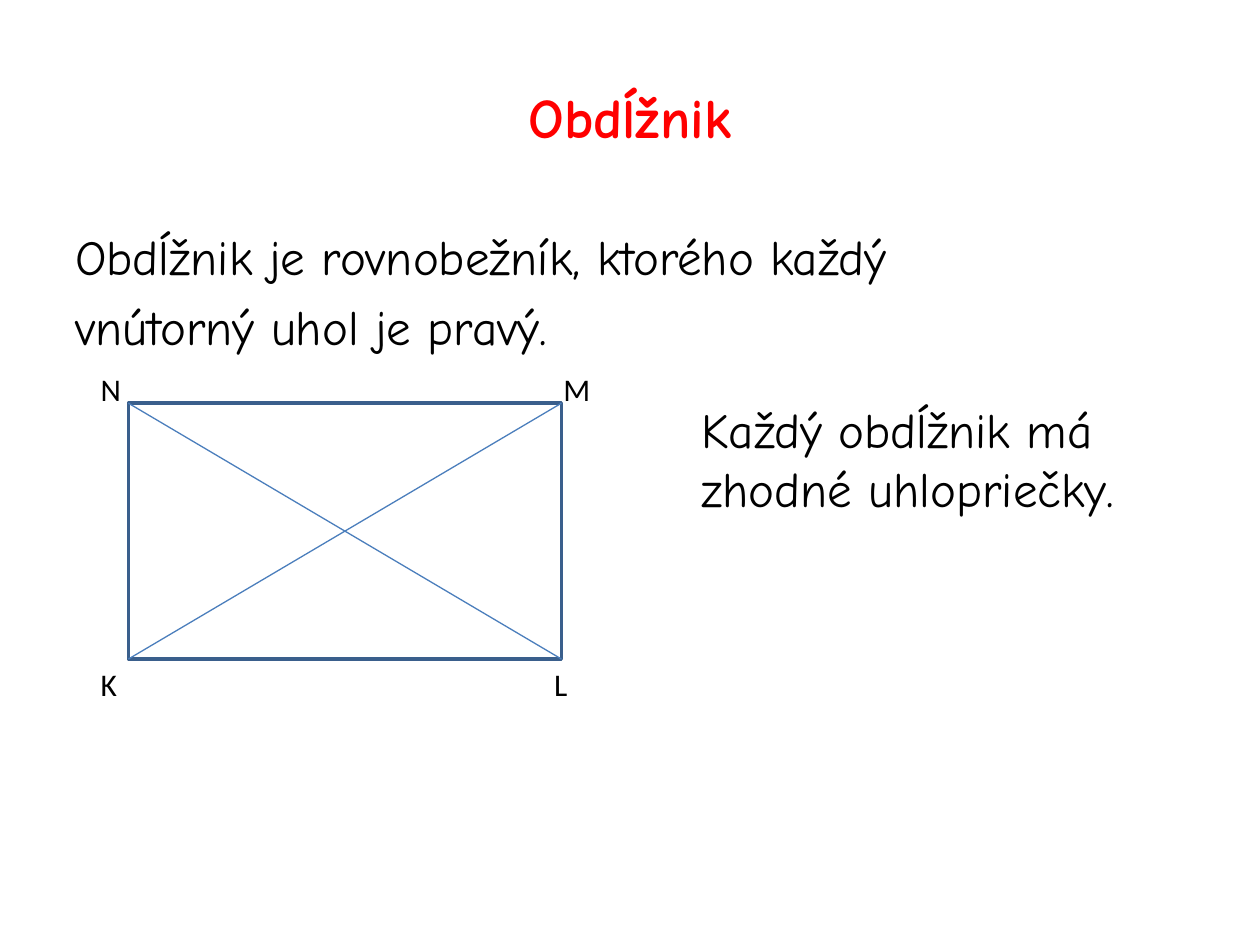
from lxml import etree
from pptx import Presentation
from pptx.dml.color import RGBColor
from pptx.enum.shapes import MSO_CONNECTOR, MSO_SHAPE
from pptx.enum.text import MSO_ANCHOR, MSO_AUTO_SIZE, PP_ALIGN
from pptx.oxml.ns import qn
from pptx.util import Pt

HAND_FONT = "Comic Neue"


def color(hex_code):
    return RGBColor.from_string(hex_code)


def add_text(s, text, x, y, w, h, size=28, font=HAND_FONT, fill="000000",
             bold=False, align=PP_ALIGN.LEFT, anchor=MSO_ANCHOR.TOP,
             wrap=True, grow=False, before=0):
    """Add a text box with one paragraph for each line of text."""
    tf = s.shapes.add_textbox(Pt(x), Pt(y), Pt(w), Pt(h)).text_frame
    tf.word_wrap = wrap
    tf.vertical_anchor = anchor
    tf.auto_size = MSO_AUTO_SIZE.SHAPE_TO_FIT_TEXT if grow else MSO_AUTO_SIZE.NONE
    for i, line in enumerate(text.split("\n")):
        p = tf.paragraphs[0] if i == 0 else tf.add_paragraph()
        p.alignment = align
        p.space_before = Pt(before)
        r = p.add_run()
        r.text = line
        r.font.size = Pt(size)
        r.font.name = font
        r.font.bold = bold
        r.font.color.rgb = color(fill)


def add_rectangle(s, x, y, w, h, line, width):
    sp = s.shapes.add_shape(MSO_SHAPE.RECTANGLE, Pt(x), Pt(y), Pt(w), Pt(h))
    sp.shadow.inherit = False
    sp.fill.background()
    sp.line.color.rgb = color(line)
    sp.line.width = Pt(width)


def add_line(s, x1, y1, x2, y2, line, width):
    cn = s.shapes.add_connector(MSO_CONNECTOR.STRAIGHT, Pt(x1), Pt(y1), Pt(x2), Pt(y2))
    cn.line.color.rgb = color(line)
    cn.line.width = Pt(width)
    etree.SubElement(cn._element.spPr, qn("a:effectLst"))


def main():
    prs = Presentation()
    prs.slide_width, prs.slide_height = Pt(720), Pt(540)
    s = prs.slides.add_slide(prs.slide_layouts[6])

    # Title and definition
    add_text(s, "Obdĺžnik", 36, 21.6, 648, 90, size=32, fill="FF0000", bold=True,
             align=PP_ALIGN.CENTER, anchor=MSO_ANCHOR.MIDDLE)
    add_text(s, "Obdĺžnik je rovnobežník, ktorého každý\nvnútorný uhol je pravý.",
             36, 126, 648, 356.4, before=6.2)

    # Rectangle KLMN
    left, top, width, height = 73.4, 230.4, 247.4, 146.2
    right, bottom = left + width, top + height
    add_rectangle(s, left, top, width, height, "3A5F8C", 2)

    # Vertex labels
    for name, x, y, w in (("K", 50.4, bottom, 23.8), ("L", 309.6, bottom, 22.3),
                          ("M", 314.9, 208, 30.2), ("N", 50.4, 208, 25.9)):
        add_text(s, name, x, y, w, 29, size=18, font="Calibri", wrap=False, grow=True)

    # Property of the diagonals
    add_text(s, "Každý obdĺžnik má\nzhodné uhlopriečky.", 393.8, 224.6, 276.5, 75,
             wrap=False, grow=True)

    # Diagonals
    for start, end in ((bottom, top), (top, bottom)):
        add_line(s, left, start, right, end, "4B7EBC", 0.75)

    prs.save("out.pptx")


if __name__ == "__main__":
    main()
